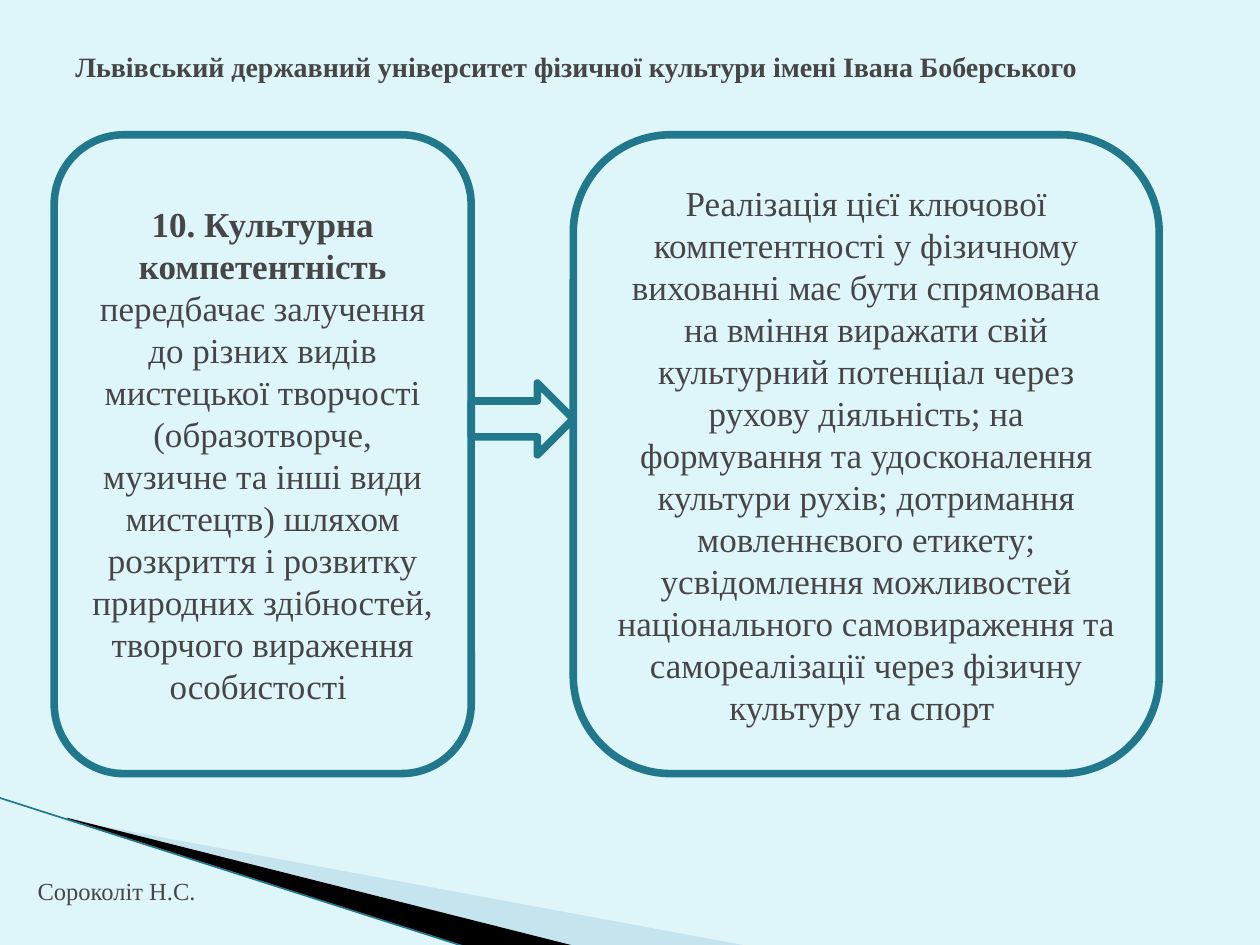
"""Build the slide on cultural competence in physical education."""
import dataclasses
import typing

import lxml.etree
import pptx
import pptx.dml.color
import pptx.enum.shapes
import pptx.enum.text
import pptx.oxml.ns
import pptx.util

PX = 9144
FONT = "Times New Roman"
BACKGROUND, TEXT, TEAL = "DEF5FA", "464646", "21788D"
PALE, BLACK = "A0CBDC", "000000"
SHAPES = pptx.enum.shapes.MSO_SHAPE
ANCHORS = pptx.enum.text.MSO_ANCHOR


class Rect(typing.NamedTuple):
    left: int
    top: int
    width: int
    height: int

    def emu(self) -> list[int]:
        return [length * PX for length in self]


class Span(typing.NamedTuple):
    text: str
    bold: bool = False


@dataclasses.dataclass
class Label:
    rect: Rect
    span: Span
    size: int
    wrap: bool
    anchor: ANCHORS


@dataclasses.dataclass
class Panel:
    rect: Rect
    kind: SHAPES
    spans: tuple[Span, ...] = ()


@dataclasses.dataclass
class Wedge:
    points: list[tuple[int, int]]
    color: str
    opacity: int = 100


WEDGES = (
    Wedge([(55, 651), (595, 751), (456, 751), (55, 650)], PALE, 40),
    Wedge([(53, 649), (457, 751), (372, 752), (54, 650)], BLACK),
)
LABELS = (
    Label(
        Rect(50, 30, 900, 46),
        Span("Львівський державний університет фізичної культури імені Івана Боберського", True),
        16, True, ANCHORS.MIDDLE,
    ),
    Label(Rect(20, 690, 147, 34), Span("Сороколіт Н.С."), 14, False, ANCHORS.TOP),
)
PANELS = (
    Panel(Rect(43, 107, 331, 507), SHAPES.ROUNDED_RECTANGLE, (
        Span("10. Культурна компетентність ", True),
        Span(
            "передбачає залучення до різних видів мистецької творчості "
            "(образотворче, музичне та інші види мистецтв) шляхом розкриття і розвитку "
            "природних здібностей, творчого вираження особистості "
        ),
    )),
    Panel(Rect(455, 107, 465, 507), SHAPES.ROUNDED_RECTANGLE, (
        Span(
            "Реалізація цієї ключової компетентності у фізичному вихованні має бути "
            "спрямована на вміння виражати свій культурний потенціал через рухову "
            "діяльність; на формування та удосконалення культури рухів; дотримання "
            "мовленнєвого етикету; усвідомлення можливостей національного самовираження "
            "та самореалізації через фізичну культуру та спорт "
        ),
    )),
    Panel(Rect(374, 304, 81, 57), SHAPES.RIGHT_ARROW),
)


def rgb(color: str) -> pptx.dml.color.RGBColor:
    return pptx.dml.color.RGBColor.from_string(color)


def paint(fill, color: str) -> None:
    fill.solid()
    fill.fore_color.rgb = rgb(color)


def add_span(para, span: Span, size: int) -> None:
    run = para.add_run()
    run.text = span.text
    run.font.name = FONT
    run.font.size = pptx.util.Pt(size)
    run.font.bold = span.bold
    run.font.color.rgb = rgb(TEXT)


def draw_wedge(page, wedge: Wedge) -> None:
    builder = page.shapes.build_freeform(*wedge.points[0], scale=PX)
    builder.add_line_segments(wedge.points[1:], close=True)
    shape = builder.convert_to_shape()
    shape.shadow.inherit = False
    shape.line.fill.background()
    paint(shape.fill, wedge.color)
    if wedge.opacity < 100:
        color = shape._element.spPr.find(".//" + pptx.oxml.ns.qn("a:srgbClr"))
        alpha = lxml.etree.SubElement(color, pptx.oxml.ns.qn("a:alpha"))
        alpha.set("val", str(wedge.opacity * 1000))


def draw_edge(page) -> None:
    edge = page.shapes.add_connector(
        pptx.enum.shapes.MSO_CONNECTOR.STRAIGHT, -1 * PX, 633 * PX, 371 * PX, 752 * PX
    )
    edge.line.color.rgb = rgb(TEAL)
    edge.line.width = pptx.util.Pt(0.95)
    lxml.etree.SubElement(edge._element.spPr, pptx.oxml.ns.qn("a:effectLst"))


def draw_label(page, label: Label) -> None:
    frame = page.shapes.add_textbox(*label.rect.emu()).text_frame
    frame.word_wrap = label.wrap
    frame.vertical_anchor = label.anchor
    add_span(frame.paragraphs[0], label.span, label.size)


def draw_panel(page, panel: Panel) -> None:
    shape = page.shapes.add_shape(panel.kind, *panel.rect.emu())
    shape.shadow.inherit = False
    paint(shape.fill, BACKGROUND)
    shape.line.color.rgb = rgb(TEAL)
    shape.line.width = pptx.util.Pt(4.33)
    frame = shape.text_frame
    frame.word_wrap = True
    frame.vertical_anchor = ANCHORS.MIDDLE
    para = frame.paragraphs[0]
    para.alignment = pptx.enum.text.PP_ALIGN.CENTER
    for span in panel.spans:
        add_span(para, span, 20)


def main() -> None:
    deck = pptx.Presentation()
    deck.slide_width, deck.slide_height = 1000 * PX, 750 * PX
    page = deck.slides.add_slide(deck.slide_layouts[6])
    paint(page.background.fill, BACKGROUND)
    for wedge in WEDGES:
        draw_wedge(page, wedge)
    draw_edge(page)
    for label in LABELS:
        draw_label(page, label)
    for panel in PANELS:
        draw_panel(page, panel)
    deck.save("out.pptx")


if __name__ == "__main__":
    main()
